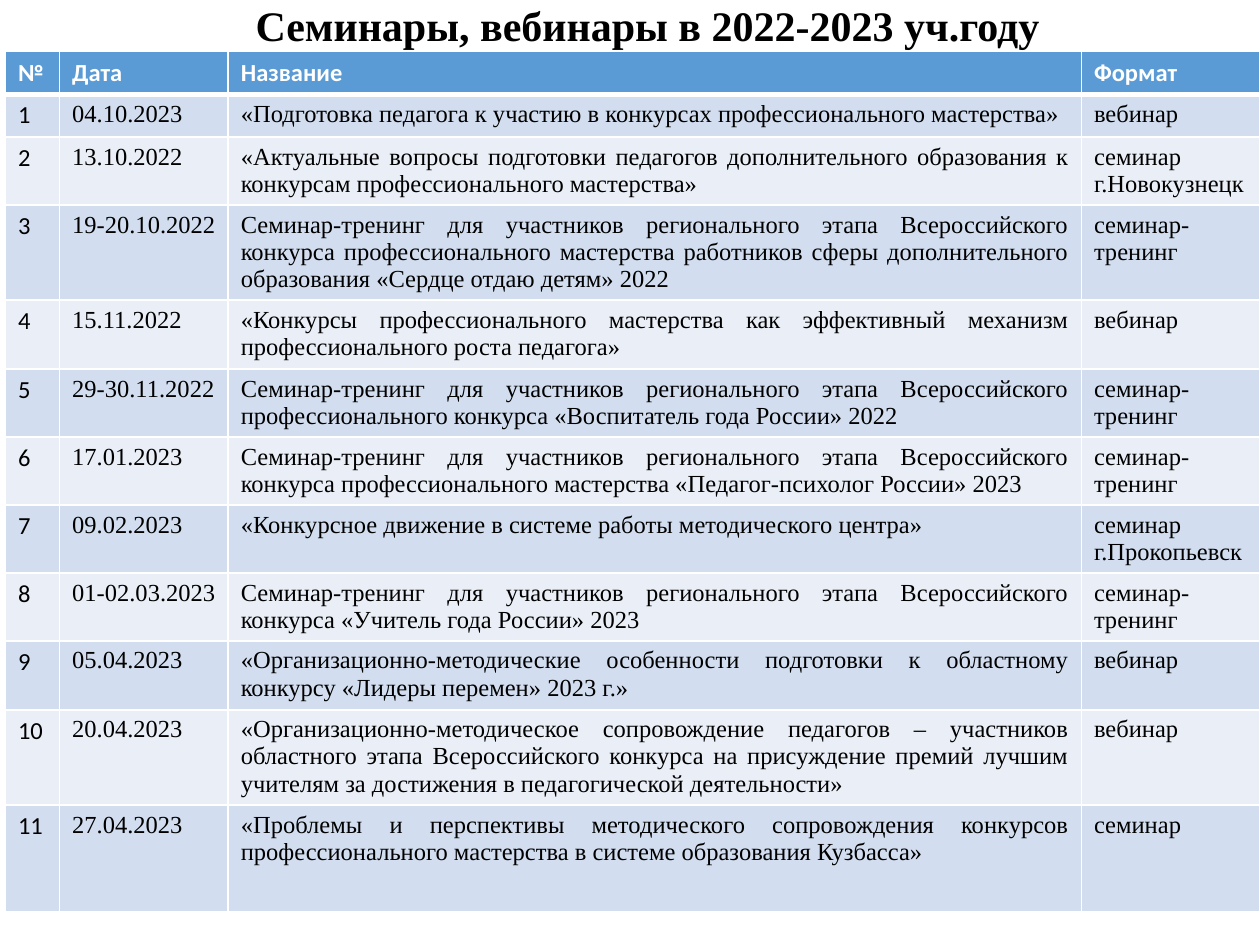
from dataclasses import dataclass

from lxml.etree import SubElement
from pptx import Presentation
from pptx.dml.color import RGBColor
from pptx.enum.text import MSO_ANCHOR as Anchor, PP_ALIGN as Align
from pptx.oxml.ns import qn
from pptx.util import Cm, Pt


@dataclass(frozen=True)
class Theme:
    heading_font: str = "Times New Roman"
    number_font: str = "Calibri"
    heading_size: int = 24
    cell_size: int = 14
    ink: str = "000000"
    paper: str = "FFFFFF"
    header: str = "5B9BD5"
    odd_row: str = "D2DEEF"
    even_row: str = "EAEFF7"
    rule: int = 1
    header_rule: int = 3


THEME = Theme()
HEADING = "Семинары, вебинары в 2022-2023 уч.году"
COLUMNS = ("№", "Дата", "Название", "Формат")
COLUMN_WIDTHS = (1.09, 3.4, 17.2, 3.6)
HEADER_HEIGHT = 0.86
EVENTS = (
    ("04.10.2023", "«Подготовка педагога к участию в конкурсах профессионального мастерства»",
     "вебинар", 0.86),
    ("13.10.2022", "«Актуальные вопросы подготовки педагогов дополнительного образования "
     "к конкурсам профессионального мастерства»", "семинар\nг.Новокузнецк", 1.37),
    ("19-20.10.2022", "Семинар-тренинг для участников регионального этапа Всероссийского "
     "конкурса профессионального мастерства работников сферы дополнительного образования "
     "«Сердце отдаю детям» 2022", "семинар-тренинг", 1.92),
    ("15.11.2022", "«Конкурсы профессионального мастерства как эффективный механизм "
     "профессионального роста педагога»", "вебинар", 1.39),
    ("29-30.11.2022", "Семинар-тренинг для участников регионального этапа Всероссийского "
     "профессионального конкурса «Воспитатель года России» 2022", "семинар-тренинг", 1.37),
    ("17.01.2023", "Семинар-тренинг для участников регионального этапа Всероссийского конкурса "
     "профессионального мастерства «Педагог-психолог России» 2023", "семинар-тренинг", 1.37),
    ("09.02.2023", "«Конкурсное движение в системе работы методического центра»",
     "семинар\nг.Прокопьевск", 1.37),
    ("01-02.03.2023", "Семинар-тренинг для участников регионального этапа Всероссийского "
     "конкурса «Учитель года России» 2023", "семинар-тренинг", 1.37),
    ("05.04.2023", "«Организационно-методические особенности подготовки к областному конкурсу "
     "«Лидеры перемен» 2023 г.»", "вебинар", 1.39),
    ("20.04.2023", "«Организационно-методическое сопровождение педагогов – участников "
     "областного этапа Всероссийского конкурса на присуждение премий лучшим учителям "
     "за достижения в педагогической деятельности»", "вебинар", 1.92),
    ("27.04.2023", "«Проблемы и перспективы методического сопровождения конкурсов "
     "профессионального мастерства в системе образования Кузбасса»", "семинар", 2.15),
)


def style_paragraph(paragraph, font_name, size, color, bold, alignment):
    paragraph.alignment = alignment
    font = paragraph.font
    font.name = font_name
    font.size = Pt(size)
    font.bold = bold
    font.color.rgb = RGBColor.from_string(color)


def add_heading(slide):
    heading = slide.shapes.add_textbox(Cm(0.71), Cm(-1.27), Cm(24.69), Cm(3.68))
    frame = heading.text_frame
    frame.word_wrap = True
    frame.vertical_anchor = Anchor.MIDDLE
    frame.text = HEADING
    line = frame.paragraphs[0]
    line.line_spacing = 0.9
    style_paragraph(line, THEME.heading_font, THEME.heading_size, THEME.ink, True, Align.CENTER)


def set_borders(cell, bottom_width):
    properties = cell._tc.get_or_add_tcPr()
    widths = {"L": THEME.rule, "R": THEME.rule, "T": THEME.rule, "B": bottom_width}
    for side, width in widths.items():
        border = SubElement(properties, qn(f"a:ln{side}"), w=str(Pt(width)))
        fill = SubElement(border, qn("a:solidFill"))
        SubElement(fill, qn("a:srgbClr"), val=THEME.paper)


def fill_cell(cell, text, font_name, ink, background, bold=False, bottom_width=THEME.rule):
    set_borders(cell, bottom_width)
    cell.margin_bottom = Cm(0)
    cell.fill.solid()
    cell.fill.fore_color.rgb = RGBColor.from_string(background)
    cell.text = text
    for paragraph in cell.text_frame.paragraphs:
        style_paragraph(paragraph, font_name, THEME.cell_size, ink, bold, Align.JUSTIFY)


def add_schedule(slide):
    heights = [HEADER_HEIGHT] + [event[-1] for event in EVENTS]
    schedule = slide.shapes.add_table(
        len(heights), len(COLUMNS), Cm(0.11), Cm(1.04),
        Cm(sum(COLUMN_WIDTHS)), Cm(sum(heights)),
    ).table
    for column, width in zip(schedule.columns, COLUMN_WIDTHS):
        column.width = Cm(width)
    for row, height in zip(schedule.rows, heights):
        row.height = Cm(height)

    for position, label in enumerate(COLUMNS):
        fill_cell(schedule.cell(0, position), label, THEME.number_font, THEME.paper,
                  THEME.header, bold=True, bottom_width=THEME.header_rule)
    for number, (date, name, form, _) in enumerate(EVENTS, start=1):
        band = THEME.odd_row if number % 2 else THEME.even_row
        for position, text in enumerate((str(number), date, name, form)):
            font_name = THEME.heading_font if position else THEME.number_font
            fill_cell(schedule.cell(number, position), text, font_name, THEME.ink, band)


def main():
    presentation = Presentation()
    presentation.slide_width = Cm(25.4)
    presentation.slide_height = Cm(19.05)
    slide = presentation.slides.add_slide(presentation.slide_layouts[6])
    add_heading(slide)
    add_schedule(slide)
    presentation.save("out.pptx")


if __name__ == "__main__":
    main()
